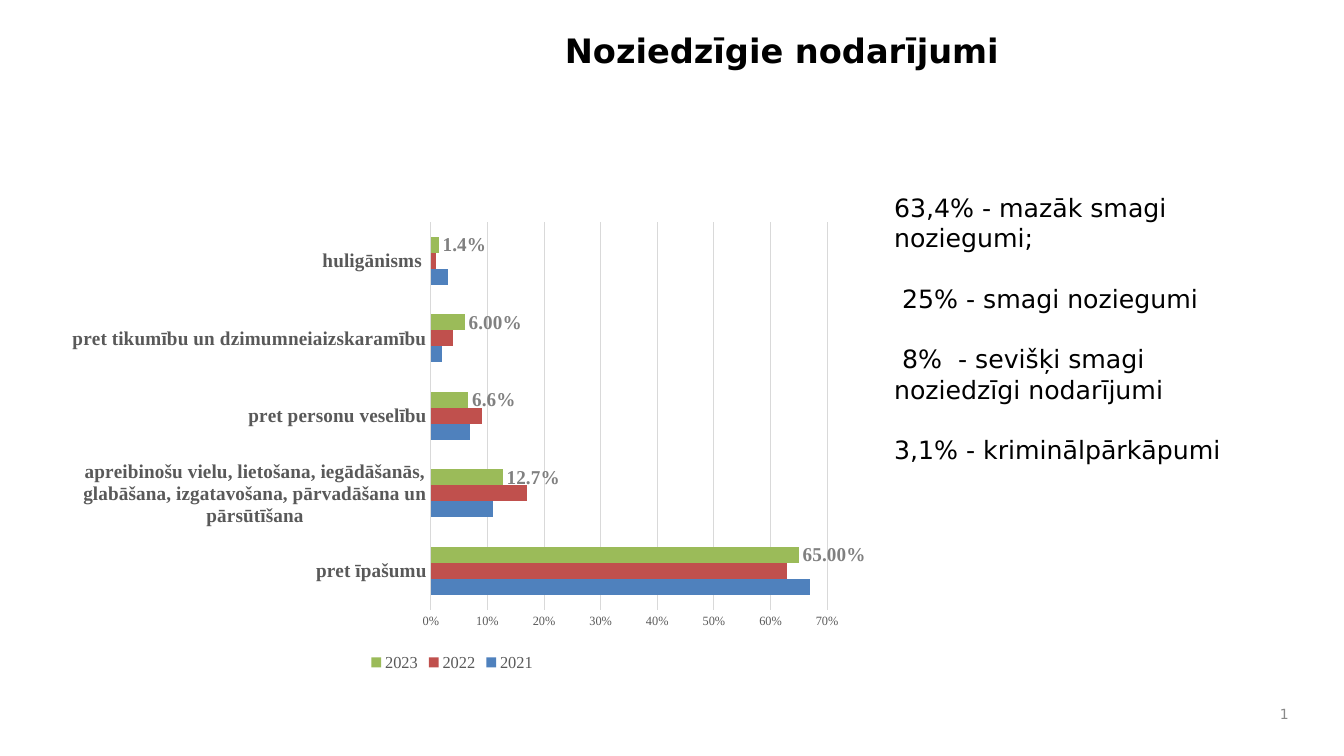
from lxml import etree
from pptx import Presentation
from pptx.chart.data import CategoryChartData
from pptx.dml.color import RGBColor
from pptx.enum.chart import XL_CHART_TYPE as CT, XL_LABEL_POSITION as LP
from pptx.enum.chart import XL_LEGEND_POSITION as LEG, XL_TICK_MARK as TM
from pptx.enum.text import MSO_ANCHOR as ANC, PP_ALIGN as AL
from pptx.oxml import parse_xml
from pptx.oxml.ns import nsdecls, qn
from pptx.util import Inches, Pt

BLACK = RGBColor(0, 0, 0)
AXIS_GRAY = RGBColor(0x59, 0x59, 0x59)
LABEL_GRAY = RGBColor(0x80, 0x80, 0x80)
NUMBER_GRAY = RGBColor(0x89, 0x89, 0x89)
GRID_GRAY = RGBColor(0xD9, 0xD9, 0xD9)
BLUE = RGBColor(0x4F, 0x81, 0xBD)
RED = RGBColor(0xC0, 0x50, 0x4D)
GREEN = RGBColor(0x9B, 0xBB, 0x59)
TEXT_FONT = "DejaVu Sans"
CHART_FONT = "Times New Roman"

CATEGORIES = [
    "pret īpašumu",
    "apreibinošu vielu, lietošana, iegādāšanās, glabāšana, "
    "izgatavošana, pārvadāšana un pārsūtīšana",
    "pret personu veselību",
    "pret tikumību un dzimumneiaizskaramību",
    "huligānisms ",
]
SERIES = [
    ("2021", (0.67, 0.11, 0.07, 0.02, 0.03), BLUE),
    ("2022", (0.63, 0.17, 0.09, 0.04, 0.01), RED),
    ("2023", (0.65, 0.127, 0.066, 0.06, 0.014), GREEN),
]
ONE_DECIMAL_POINTS = (1, 2, 4)
PLOT_AREA = {"x": 0.473, "y": 0.033, "w": 0.502, "h": 0.827}
SEVERITY = [
    "63,4% - mazāk smagi noziegumi;",
    " 25% - smagi noziegumi",
    " 8%  - sevišķi smagi noziedzīgi nodarījumi",
    "3,1% - kriminālpārkāpumi",
]


def set_font(font, size, color, name=CHART_FONT, bold=False):
    font.size, font.name, font.bold = Pt(size), name, bold
    font.color.rgb = color


def write(p, text, size=18, color=BLACK, bold=False, align=AL.LEFT, after=0):
    p.alignment = align
    p.space_before, p.space_after = Pt(0), Pt(after)
    r = p.add_run()
    r.text = text
    set_font(r.font, size, color, TEXT_FONT, bold)
    return r


def add_box(s, left, top, width, height, anchor=ANC.TOP):
    tf = s.shapes.add_textbox(Inches(left), Inches(top),
                              Inches(width), Inches(height)).text_frame
    tf.word_wrap = True
    tf.vertical_anchor = anchor
    return tf


def add_title(s, text):
    sp = s.shapes.title
    sp.left, sp.top = Inches(2.75), Inches(0.25)
    sp.width, sp.height = Inches(10.01), Inches(0.73)
    sp.text_frame.vertical_anchor = ANC.TOP
    write(sp.text_frame.paragraphs[0], text, size=24, bold=True, align=AL.CENTER)


def add_slide_number(s, number):
    tf = add_box(s, 12.44, 6.92, 0.44, 0.33, ANC.MIDDLE)
    r = write(tf.paragraphs[0], number, size=10, color=NUMBER_GRAY, align=AL.RIGHT)
    # Turn the run into a slide number field
    r._r.tag = qn("a:fld")
    r._r.set("id", "{B6F15528-21DE-4FAA-801E-634DDDAF4B2B}")
    r._r.set("type", "slidenum")


def add_severity_list(s):
    tf = add_box(s, 8.77, 1.86, 3.67, 2.83)
    for i, text in enumerate(SEVERITY):
        p = tf.add_paragraph() if i else tf.paragraphs[0]
        write(p, text, after=21.6)


def set_plot_area(chart):
    plot_area = chart._chartSpace.chart.plotArea
    for old in plot_area.findall(qn("c:layout")):
        plot_area.remove(old)
    layout = parse_xml(f"<c:layout {nsdecls('c')}><c:manualLayout/></c:layout>")
    settings = {"layoutTarget": "inner", "xMode": "edge", "yMode": "edge", **PLOT_AREA}
    for tag, val in settings.items():
        etree.SubElement(layout[0], qn("c:" + tag)).set("val", str(val))
    plot_area.insert(0, layout)


def format_axis(axis, size, bold=False):
    axis.major_tick_mark = axis.minor_tick_mark = TM.NONE
    set_font(axis.tick_labels.font, size, AXIS_GRAY, bold=bold)


def add_value_labels(series):
    labels = series.data_labels
    labels.show_value = True
    labels.number_format, labels.number_format_is_linked = "0.00%", False
    labels.position = LP.OUTSIDE_END
    set_font(labels.font, 14, LABEL_GRAY, bold=True)
    for i in ONE_DECIMAL_POINTS:
        label = series.points[i].data_label
        set_font(label.font, 14, LABEL_GRAY, bold=True)
        label.position = LP.OUTSIDE_END
        # A single label takes its number format only through XML
        fmt = parse_xml(f'<c:numFmt {nsdecls("c")} formatCode="0.0%" sourceLinked="0"/>')
        label.font  # the label element exists from here on
        labels._element.xpath(f"c:dLbl[c:idx/@val='{i}']")[0].insert(1, fmt)


def add_crime_chart(s):
    data = CategoryChartData(number_format="0%")
    data.categories = CATEGORIES
    for name, values, _ in SERIES:
        data.add_series(name, values)
    chart = s.shapes.add_chart(CT.BAR_CLUSTERED, Inches(0.57), Inches(2.05),
                               Inches(8.02), Inches(4.65), data).chart
    set_font(chart.font, 10, BLACK)
    chart.has_title = False
    set_plot_area(chart)

    # Legend
    chart.has_legend = True
    chart.legend.position = LEG.BOTTOM
    chart.legend.include_in_layout = False
    set_font(chart.legend.font, 12, AXIS_GRAY)

    # Axes
    cat, val = chart.category_axis, chart.value_axis
    format_axis(cat, 14, bold=True)
    format_axis(val, 9)
    val.minimum_scale, val.maximum_scale, val.major_unit = 0, 0.7, 0.1
    val.tick_labels.number_format = "0%"
    val.tick_labels.number_format_is_linked = False
    val.format.line.fill.background()
    val.has_major_gridlines = True
    for line in (cat.format.line, val.major_gridlines.format.line):
        line.color.rgb, line.width = GRID_GRAY, Pt(0.75)

    # Bars
    plot = chart.plots[0]
    plot.gap_width, plot.vary_by_categories = 182, False
    for series, (_, _, color) in zip(plot.series, SERIES):
        series.format.fill.solid()
        series.format.fill.fore_color.rgb = color
    add_value_labels(plot.series[-1])


def main():
    prs = Presentation()
    prs.slide_width, prs.slide_height = Inches(13.33), Inches(7.5)
    s = prs.slides.add_slide(prs.slide_layouts[5])
    add_title(s, "Noziedzīgie nodarījumi")
    add_slide_number(s, "7")
    add_severity_list(s)
    add_crime_chart(s)
    prs.save("out.pptx")


if __name__ == "__main__":
    main()
